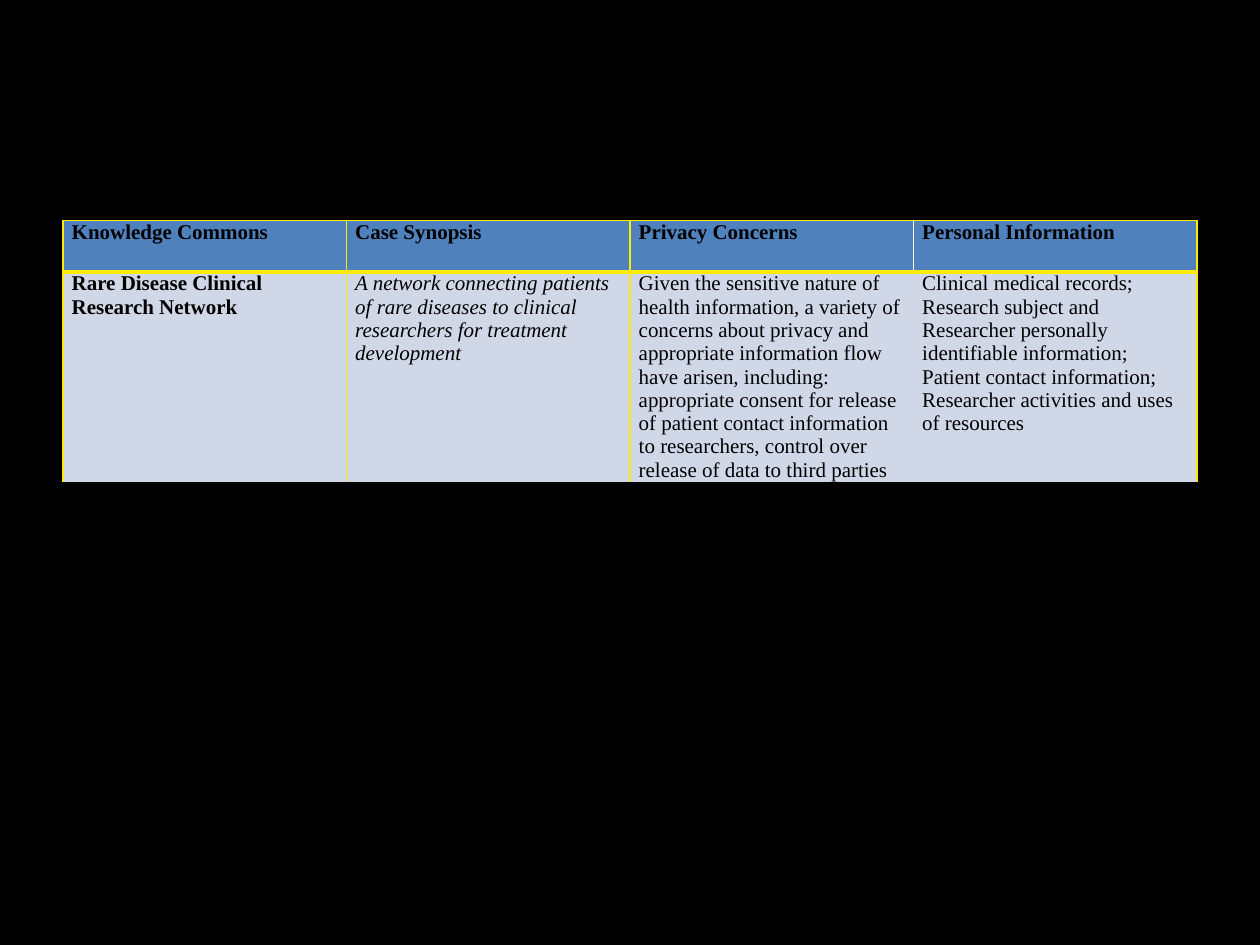
"""Build a one-slide table of privacy concerns in a knowledge commons."""
from lxml import etree
from pptx import Presentation
from pptx.dml.color import RGBColor
from pptx.oxml import ns
from pptx.util import Pt

COLORS = {
    "background": "000000", "text": "000000", "header": "4F81BD",
    "body": "D0D8E8", "rule": "FFEB08", "divider": "FFFFFF",
}
HEADERS = ["Knowledge Commons", "Case Synopsis", "Privacy Concerns", "Personal Information"]
CASE = [
    "Rare Disease Clinical Research Network",
    "A network connecting patients of rare diseases to clinical researchers "
    "for treatment development",
    "Given the sensitive nature of health information, a variety of concerns about "
    "privacy and appropriate information flow have arisen, including: appropriate "
    "consent for release of patient contact information to researchers, control over "
    "release of data to third parties",
    "Clinical medical records; Research subject and Researcher personally identifiable "
    "information; Patient contact information; Researcher activities and uses of resources",
]
RULE = ("rule", 1)
HORIZONTAL = [RULE, ("rule", 3), None]
VERTICAL = [
    [RULE, RULE, RULE, ("divider", 0.5), RULE],
    [RULE, RULE, RULE, None, RULE],
]
MARGINS = {"margin_left": Pt(5), "margin_right": Pt(5), "margin_top": 0, "margin_bottom": 0}
FONT = {"name": "Times New Roman", "size": Pt(12)}


def rgb(key):
    return RGBColor.from_string(COLORS[key])


def set_attrs(obj, values):
    for name, value in values.items():
        setattr(obj, name, value)


def add_border(cell, side, line):
    tcPr = cell._tc.get_or_add_tcPr()
    ln = etree.SubElement(tcPr, ns.qn(f"a:ln{side}"))
    if line is None:
        ln.set("w", "0")
        etree.SubElement(ln, ns.qn("a:noFill"))
        return
    color, width = line
    ln.set("w", str(Pt(width)))
    fill = etree.SubElement(ln, ns.qn("a:solidFill"))
    etree.SubElement(fill, ns.qn("a:srgbClr"), val=COLORS[color])


def fill_cell(cell, content, fill, borders, style):
    for side, line in borders.items():
        add_border(cell, side, line)
    cell.fill.solid()
    cell.fill.fore_color.rgb = rgb(fill)
    set_attrs(cell, MARGINS)
    r = cell.text_frame.paragraphs[0].add_run()
    r.text = content
    set_attrs(r.font, FONT | style)
    r.font.color.rgb = rgb("text")


def add_case_table(s):
    frame = s.shapes.add_table(2, len(HEADERS), Pt(36), Pt(126), Pt(648), Pt(59))
    table = frame.table
    table.horz_banding = False
    for i, row in enumerate([HEADERS, CASE]):
        table.rows[i].height = Pt(29.5)
        for j, content in enumerate(row):
            borders = {
                "L": VERTICAL[i][j], "R": VERTICAL[i][j + 1],
                "T": HORIZONTAL[i], "B": HORIZONTAL[i + 1],
            }
            style = {"bold": i == 0 or j == 0, "italic": i == 1 and j == 1}
            fill_cell(table.cell(i, j), content, "body" if i else "header", borders, style)
    frame.height = Pt(159)


def main():
    prs = Presentation()
    set_attrs(prs, {"slide_width": Pt(720), "slide_height": Pt(540)})
    s = prs.slides.add_slide(prs.slide_layouts[6])
    s.background.fill.solid()
    s.background.fill.fore_color.rgb = rgb("background")
    add_case_table(s)
    prs.save("out.pptx")


if __name__ == "__main__":
    main()
